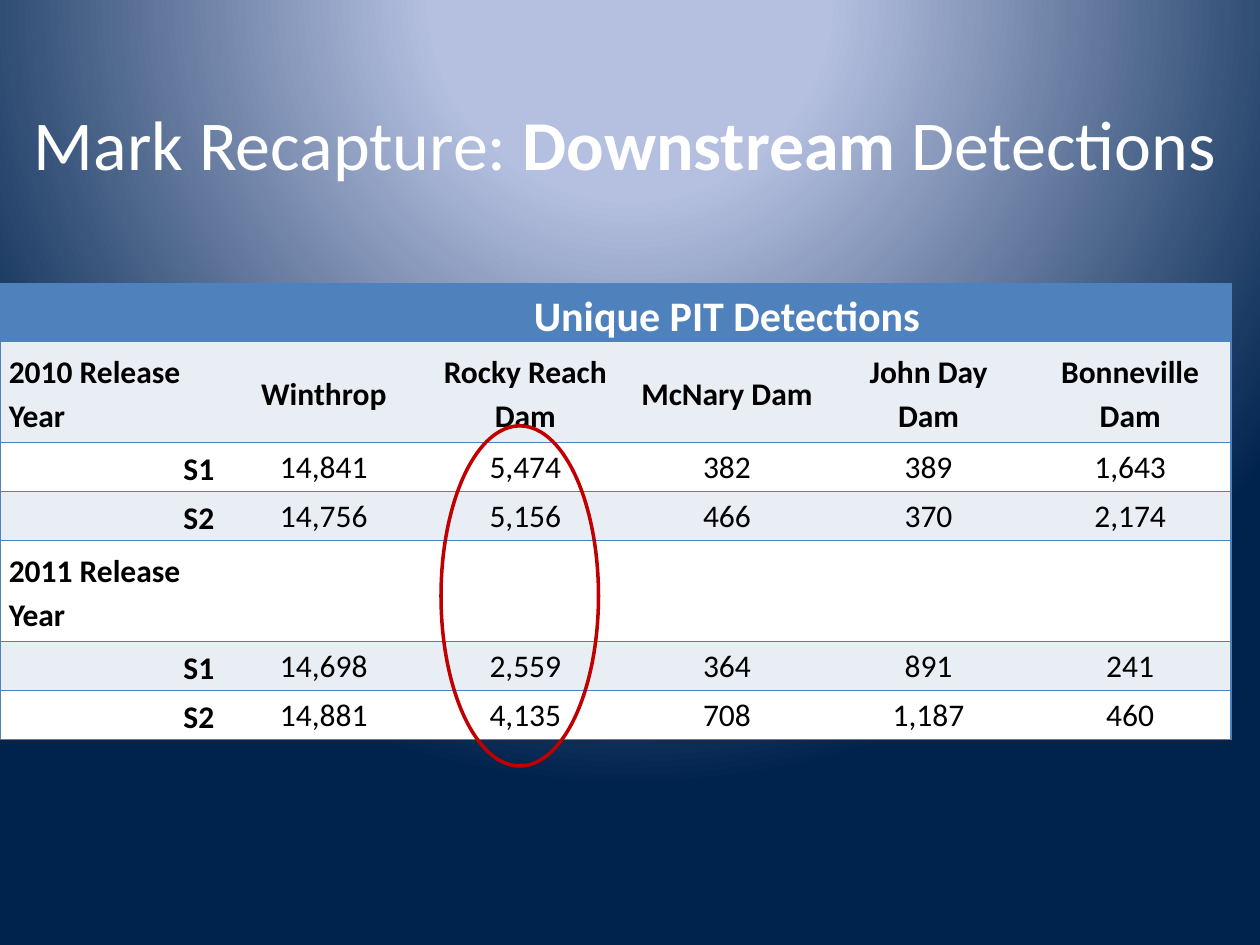
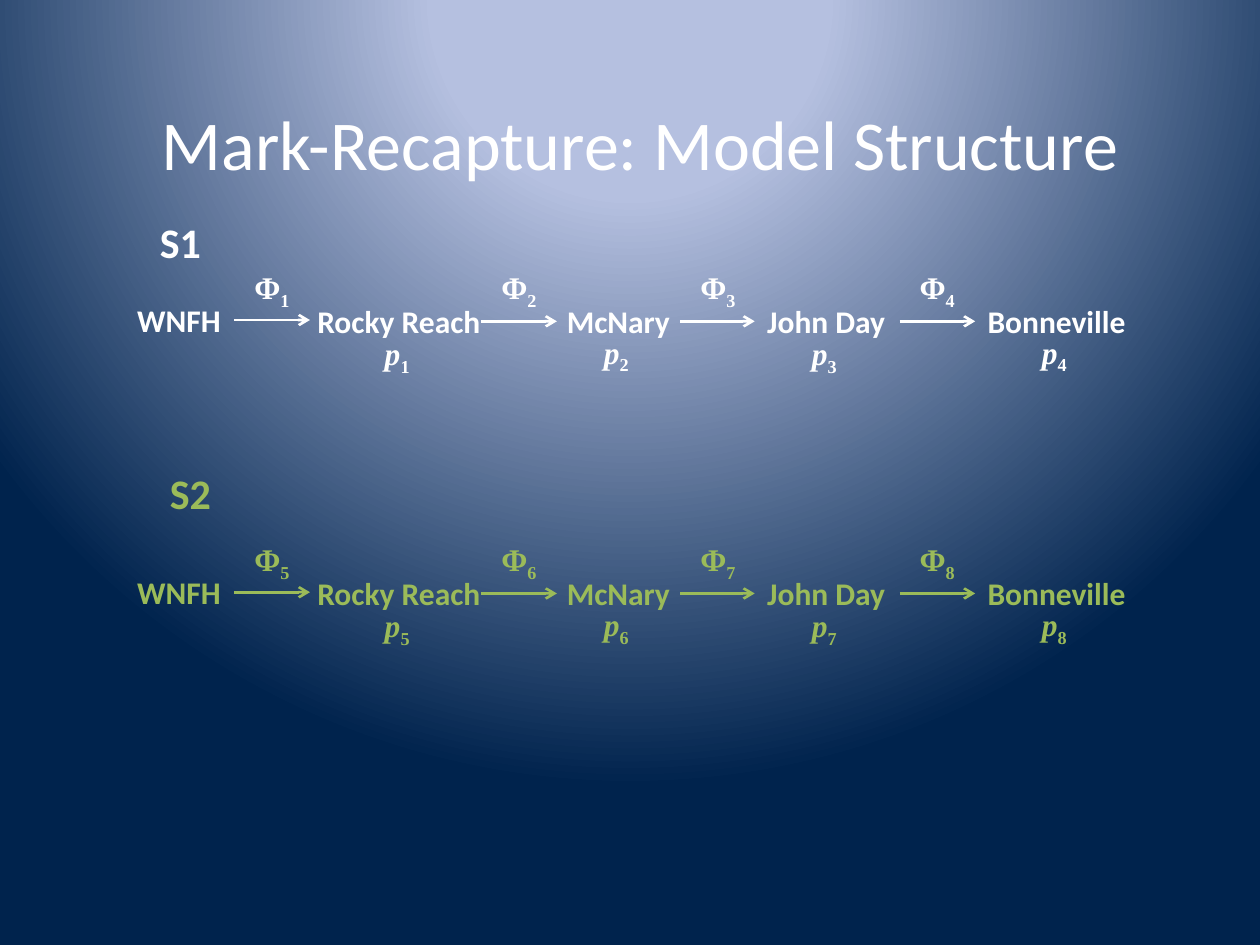
from lxml.etree import SubElement
from pptx import Presentation
from pptx.dml.color import RGBColor
from pptx.enum.shapes import MSO_CONNECTOR, MSO_SHAPE
from pptx.enum.text import MSO_ANCHOR, MSO_AUTO_SIZE, PP_ALIGN
from pptx.oxml.ns import qn
from pptx.util import Inches, Pt

WHITE, BLACK, RED, GREEN = "FFFFFF", "000000", "C00000", "9BBB59"
BLUE, PALE = "4F81BD", "E9EDF4"
GLOW, NAVY = "B5C0E0", "00234D"
SANS, SERIF = "Calibri", "Times New Roman"

COL_WIDTHS = [1.77] + [1.6] * 5
ROW_HEIGHTS = [0.46, 0.8, 0.39, 0.39, 0.8, 0.39, 0.39]
DETECTIONS = [
    ["", "Unique PIT Detections", "", "", "", ""],
    ["2010 Release Year", "Winthrop", "Rocky Reach Dam", "McNary Dam",
     "John Day Dam", "Bonneville Dam"],
    ["S1", "14,841", "5,474", "382", "389", "1,643"],
    ["S2", "14,756", "5,156", "466", "370", "2,174"],
    ["2011 Release Year", "", "", "", "", ""],
    ["S1", "14,698", "2,559", "364", "891", "241"],
    ["S2", "14,881", "4,135", "708", "1,187", "460"],
]

# Station name, left, width, drop below the row top, start of the arrow leaving it
STATIONS = [
    ("WNFH", 0.99, 0.87, 0.26, 1.86),
    ("Rocky Reach", 2.42, 1.51, 0.27, 3.82),
    ("McNary", 4.4, 1.03, 0.27, 5.4),
    ("John Day", 5.99, 1.15, 0.27, 7.14),
    ("Bonneville", 7.74, 1.3, 0.27, None),
]
ARROW_LENGTH = 0.6
LABEL_HEIGHT = 0.4


def rgb(value):
    return RGBColor.from_string(value)


def add_run(p, text, size, color, font=SANS, bold=False, italic=False, sub=False):
    r = p.add_run()
    r.text = text
    f = r.font
    f.name, f.size, f.bold, f.italic = font, Pt(size), bold, italic
    f.color.rgb = rgb(color)
    if sub:
        f._element.set("baseline", "-25000")


def add_background(slide):
    fill = slide.background.fill
    fill.gradient()
    for stop, position, color in zip(fill.gradient_stops, (0.25, 1), (GLOW, NAVY)):
        stop.position = position
        stop.color.rgb = rgb(color)
    # Circular glow centred above the slide
    grad = slide.element.find(".//" + qn("a:gradFill"))
    grad.remove(grad.find(qn("a:lin")))
    circle = SubElement(grad, qn("a:path"), path="circle")
    SubElement(circle, qn("a:fillToRect"), l="50000", t="-80000", r="50000", b="180000")


def add_title(slide, left, width, runs):
    sp = slide.shapes.add_textbox(Inches(left), Inches(0.33), Inches(width), Inches(1.61))
    tf = sp.text_frame
    tf.word_wrap = True
    tf.vertical_anchor = MSO_ANCHOR.MIDDLE
    p = tf.paragraphs[0]
    p.alignment = PP_ALIGN.CENTER
    p.space_before = Pt(8)
    indent = Inches(0.38)
    pPr = p._p.get_or_add_pPr()
    pPr.set("marL", str(indent))
    pPr.set("indent", str(-indent))
    for text, bold in runs:
        add_run(p, text, 40, WHITE, bold=bold)


def new_slide(prs, title_left, title_width, title_runs):
    slide = prs.slides.add_slide(prs.slide_layouts[6])
    add_background(slide)
    add_title(slide, title_left, title_width, title_runs)
    return slide


# Detections table
def set_borders(cell, sides):
    tcPr = cell._tc.get_or_add_tcPr()
    for side in "LRTB":
        ln = SubElement(tcPr, qn("a:ln" + side), w=str(Pt(1)))
        if side in sides:
            SubElement(SubElement(ln, qn("a:solidFill")), qn("a:srgbClr"), val=BLUE)
        else:
            SubElement(ln, qn("a:noFill"))


def fill_cell(cell, text, row, col):
    header, first = row == 0, col == 0
    last = col == len(COL_WIDTHS) - 1
    set_borders(cell, "TB" + "L" * first + "R" * last)
    cell.fill.solid()
    cell.fill.fore_color.rgb = rgb(BLUE if header else PALE if row % 2 else WHITE)
    cell.margin_left = cell.margin_right = Inches(0.07)
    cell.margin_top = cell.margin_bottom = 0
    if not text:
        return
    if first or row == 1:
        cell.vertical_anchor = MSO_ANCHOR.MIDDLE
    p = cell.text_frame.paragraphs[0]
    p.line_spacing, p.space_after = 1.15, Pt(10)
    if not first:
        p.alignment = PP_ALIGN.CENTER
    elif text.startswith("S"):
        p.alignment = PP_ALIGN.RIGHT
    add_run(p, text, 24 if header else 18, WHITE if header else BLACK,
            bold=first or row < 2)


def add_detections(slide, left, top):
    frame = slide.shapes.add_table(
        len(ROW_HEIGHTS), len(COL_WIDTHS), Inches(left), Inches(top),
        Inches(sum(COL_WIDTHS)), Inches(sum(ROW_HEIGHTS)))
    table = frame.table
    table.first_row = table.horz_banding = False
    for column, width in zip(table.columns, COL_WIDTHS):
        column.width = Inches(width)
    for row, height in zip(table.rows, ROW_HEIGHTS):
        row.height = Inches(height)
    for i, values in enumerate(DETECTIONS):
        for j, text in enumerate(values):
            fill_cell(table.cell(i, j), text, i, j)
    table.cell(0, 1).merge(table.cell(0, 5))
    set_header_edge = table.cell(0, 1)._tc.tcPr.find(qn("a:lnR"))
    set_header_edge.remove(set_header_edge[0])
    SubElement(SubElement(set_header_edge, qn("a:solidFill")), qn("a:srgbClr"), val=BLUE)


def add_highlight(slide, left, top, width, height):
    sp = slide.shapes.add_shape(MSO_SHAPE.OVAL, Inches(left), Inches(top),
                                Inches(width), Inches(height))
    sp.shadow.inherit = False
    sp.fill.background()
    sp.line.color.rgb = rgb(RED)
    sp.line.width = Pt(2)


# Model structure
def add_label(shapes, left, top, width, text, color, size=18, height=LABEL_HEIGHT,
              font=SANS, italic=False, subscript=None):
    sp = shapes.add_textbox(Inches(left), Inches(top), Inches(width), Inches(height))
    tf = sp.text_frame
    tf.word_wrap = False
    tf.auto_size = MSO_AUTO_SIZE.SHAPE_TO_FIT_TEXT
    p = tf.paragraphs[0]
    add_run(p, text, size, color, font, bold=True, italic=italic)
    if subscript:
        add_run(p, str(subscript), size, color, font, bold=True, sub=True)
    return sp


def add_arrow(shapes, start, y, color, source, target):
    end = start + ARROW_LENGTH
    line = shapes.add_connector(MSO_CONNECTOR.STRAIGHT, Inches(start), Inches(y),
                                Inches(end), Inches(y))
    line.line.color.rgb = rgb(color)
    line.line.width = Pt(1.5)
    spPr = line._element.spPr
    SubElement(spPr.find(qn("a:ln")), qn("a:tailEnd"), type="arrow")
    SubElement(spPr, qn("a:effectLst"))
    # Join only the ends that meet a label's side
    near = Inches(0.015)
    if abs(source.left + source.width - Inches(start)) < near:
        line.begin_connect(source, 3)
    if abs(target.left - Inches(end)) < near:
        line.end_connect(target, 1)


def add_model(slide, top, color, first_index):
    shapes = slide.shapes.add_group_shape().shapes
    labels = [add_label(shapes, left, top + drop, width, name, color)
              for name, left, width, drop, _ in STATIONS]
    # Survival between stations
    for i, (_, _, _, drop, start) in enumerate(STATIONS[:-1]):
        add_arrow(shapes, start, top + drop + LABEL_HEIGHT / 2, color,
                  labels[i], labels[i + 1])
        add_label(shapes, start + 0.06, top, 0.49, "Φ", color, font=SERIF,
                  subscript=first_index + i)
    # Detection at each dam
    for i, (_, left, width, _, _) in enumerate(STATIONS[1:]):
        add_label(shapes, left + width / 2 - 0.22, top + (0.51 if i % 2 else 0.52), 0.41,
                  "p", color, font=SERIF, italic=True, subscript=first_index + i)


def build_detections_slide(prs):
    slide = new_slide(prs, 0, 9.92, [("Mark Recapture: ", False), ("Downstream", True),
                                     (" Detections", False)])
    add_detections(slide, 0, 2.25)
    add_highlight(slide, 3.5, 3.38, 1.25, 2.7)


def build_model_slide(prs):
    slide = new_slide(prs, 0.83, 8.5, [("Mark-Recapture: Model Structure", False)])
    add_model(slide, 2.08, WHITE, 1)
    add_model(slide, 4.24, GREEN, 5)
    add_label(slide.shapes, 1.17, 1.67, 0.53, "S1", WHITE, size=24, height=0.5)
    add_label(slide.shapes, 1.25, 3.66, 0.53, "S2", GREEN, size=24, height=0.5)


def main():
    prs = Presentation()
    prs.slide_width, prs.slide_height = Inches(10), Inches(7.5)
    build_detections_slide(prs)
    build_model_slide(prs)
    prs.save("out.pptx")


if __name__ == "__main__":
    main()
